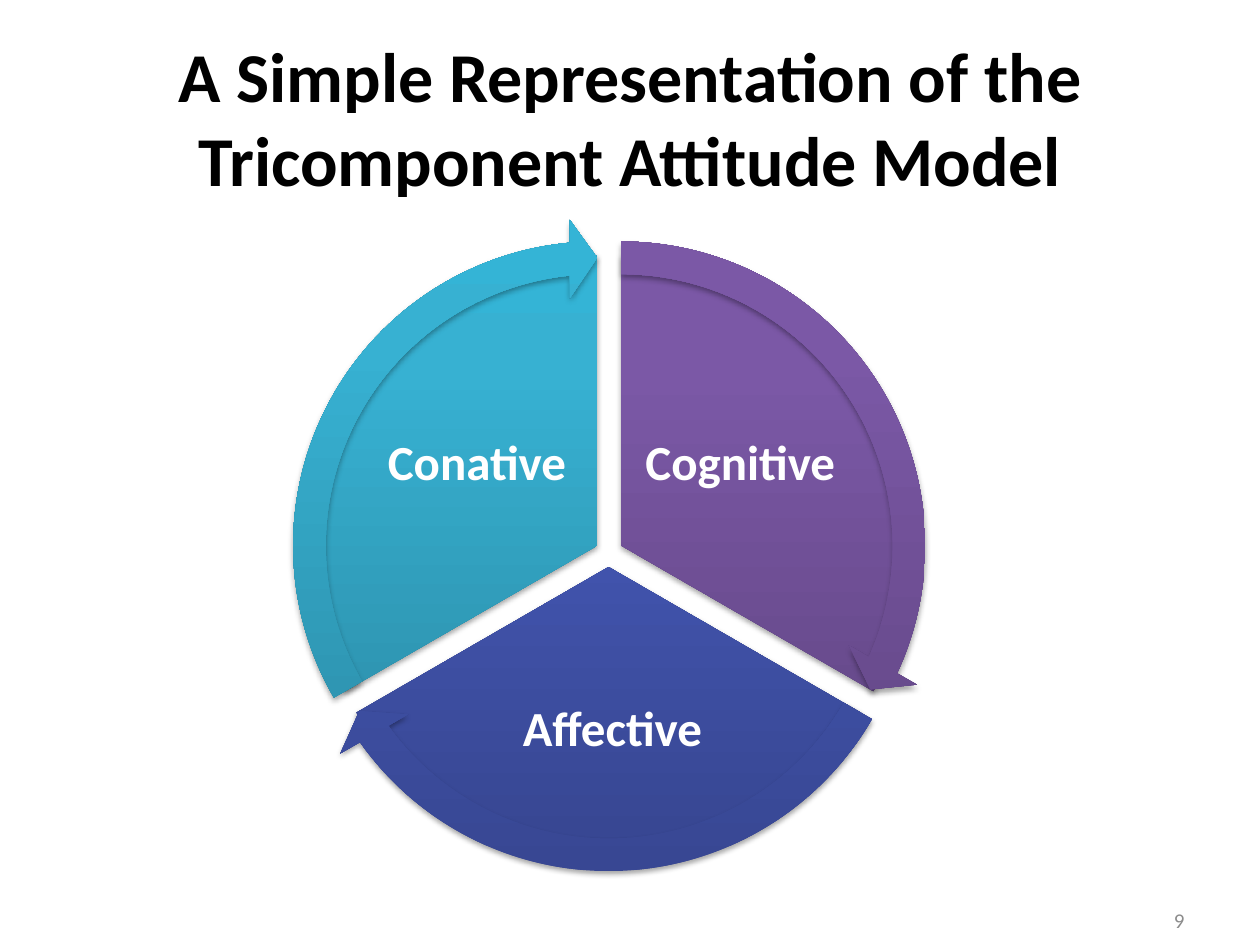
from pptx import Presentation
from pptx.dml.color import RGBColor
from pptx.enum.shapes import MSO_SHAPE as Preset
from pptx.enum.text import MSO_ANCHOR as Anchor, PP_ALIGN as Align
from pptx.oxml import parse_xml
from pptx.oxml.ns import nsdecls, qn
from pptx.util import Inches, Pt

FONT = "Calibri"
TITLE_ONLY = 5
PIE_SIZE, ARROW_SIZE = 4.62, 5.19
ARROW_MARGIN = (ARROW_SIZE - PIE_SIZE) / 2
ARROW_THICKNESS, HEAD_WIDTH, HEAD_ANGLE = 0.05, 0.06, 3.28

# Label, sector corner, start and end in degrees, label box, gradient from the bottom up
COMPONENTS = [
    ("Cognitive", (2.62, 2.02), (270, 30), (5.05, 3, 1.65, 1.37),
     ("5F4480", "7B58A6", "7C57A8")),
    ("Affective", (2.52, 2.19), (30, 150), (3.62, 5.19, 2.48, 1.21),
     ("374691", "475BBC", "455ABF")),
    ("Conative", (2.43, 2.02), (150, 270), (2.96, 3, 1.65, 1.37),
     ("2A88A2", "37B1D2", "34B4D6")),
]


def rgb(hex_color):
    return RGBColor.from_string(hex_color)


def angle_adjustment(degrees):
    """Convert degrees to python-pptx's adjustment unit."""
    return degrees * 0.6


def write(frame, text, size, color, align, bold=False):
    frame.word_wrap = True
    frame.vertical_anchor = Anchor.MIDDLE
    paragraph = frame.paragraphs[0]
    paragraph.alignment = align
    run = paragraph.add_run()
    run.text = text
    run.font.name = FONT
    run.font.size = Pt(size)
    run.font.bold = bold
    run.font.color.rgb = rgb(color)
    return paragraph


def apply_gradient(shape, colors):
    stops = "".join(
        f'<a:gs pos="{position}"><a:srgbClr val="{color}"/></a:gs>'
        for position, color in zip((0, 80000, 100000), colors))
    shape.fill.background()
    properties = shape.element.spPr
    properties.replace(properties.find(qn("a:noFill")), parse_xml(
        f'<a:gradFill {nsdecls("a")} rotWithShape="1"><a:gsLst>{stops}</a:gsLst>'
        '<a:lin ang="16200000" scaled="0"/></a:gradFill>'))


def apply_shadow(shape):
    shape.shadow.inherit = False
    shape.element.spPr.find(qn("a:effectLst")).append(parse_xml(
        f'<a:outerShdw {nsdecls("a")} blurRad="40000" dist="23000" dir="5400000" '
        'rotWithShape="0"><a:srgbClr val="000000"><a:alpha val="35000"/>'
        '</a:srgbClr></a:outerShdw>'))


def add_cycle_part(cycle, preset, left, top, size, adjustments, colors):
    part = cycle.shapes.add_shape(
        preset, Inches(left), Inches(top), Inches(size), Inches(size))
    for index, value in enumerate(adjustments):
        part.adjustments[index] = value
    apply_gradient(part, colors)
    part.line.fill.background()
    apply_shadow(part)


def add_sector(cycle, corner, angles, colors):
    add_cycle_part(cycle, Preset.PIE, *corner, PIE_SIZE,
                   [angle_adjustment(angle) for angle in angles], colors)


def add_rim_arrow(cycle, corner, angles, colors):
    start, end = map(angle_adjustment, angles)
    left, top = (edge - ARROW_MARGIN for edge in corner)
    add_cycle_part(cycle, Preset.CIRCULAR_ARROW, left, top, ARROW_SIZE,
                   (ARROW_THICKNESS, HEAD_ANGLE, end - HEAD_ANGLE, start, HEAD_WIDTH),
                   colors)


def add_label(cycle, text, box):
    frame = cycle.shapes.add_textbox(*map(Inches, box)).text_frame
    frame.margin_left = frame.margin_right = Inches(0.04)
    frame.margin_top = frame.margin_bottom = Inches(0.04)
    write(frame, text, 28, "FFFFFF", Align.CENTER, bold=True).line_spacing = 0.9


def add_title(slide, text):
    title = slide.shapes.title
    title.left, title.top, title.width, title.height = map(Inches, (0.5, 0.3, 9, 1.25))
    write(title.text_frame, text, 40, "000000", Align.CENTER, bold=True)


def add_page_number(slide, number):
    box = slide.shapes.add_textbox(*map(Inches, (7.17, 7.1, 2.33, 0.4)))
    write(box.text_frame, number, 12, "8C8C8C", Align.RIGHT)


def main():
    prs = Presentation()
    prs.slide_width, prs.slide_height = Inches(10), Inches(7.5)
    slide = prs.slides.add_slide(prs.slide_layouts[TITLE_ONLY])

    add_title(slide, "A Simple Representation of the Tricomponent Attitude Model")
    add_page_number(slide, "9")

    cycle = slide.shapes.add_group_shape()
    for label, corner, angles, label_box, colors in COMPONENTS:
        add_sector(cycle, corner, angles, colors)
        add_label(cycle, label, label_box)
    for _, corner, angles, _, colors in COMPONENTS:
        add_rim_arrow(cycle, corner, angles, colors)

    prs.save("out.pptx")


if __name__ == "__main__":
    main()
